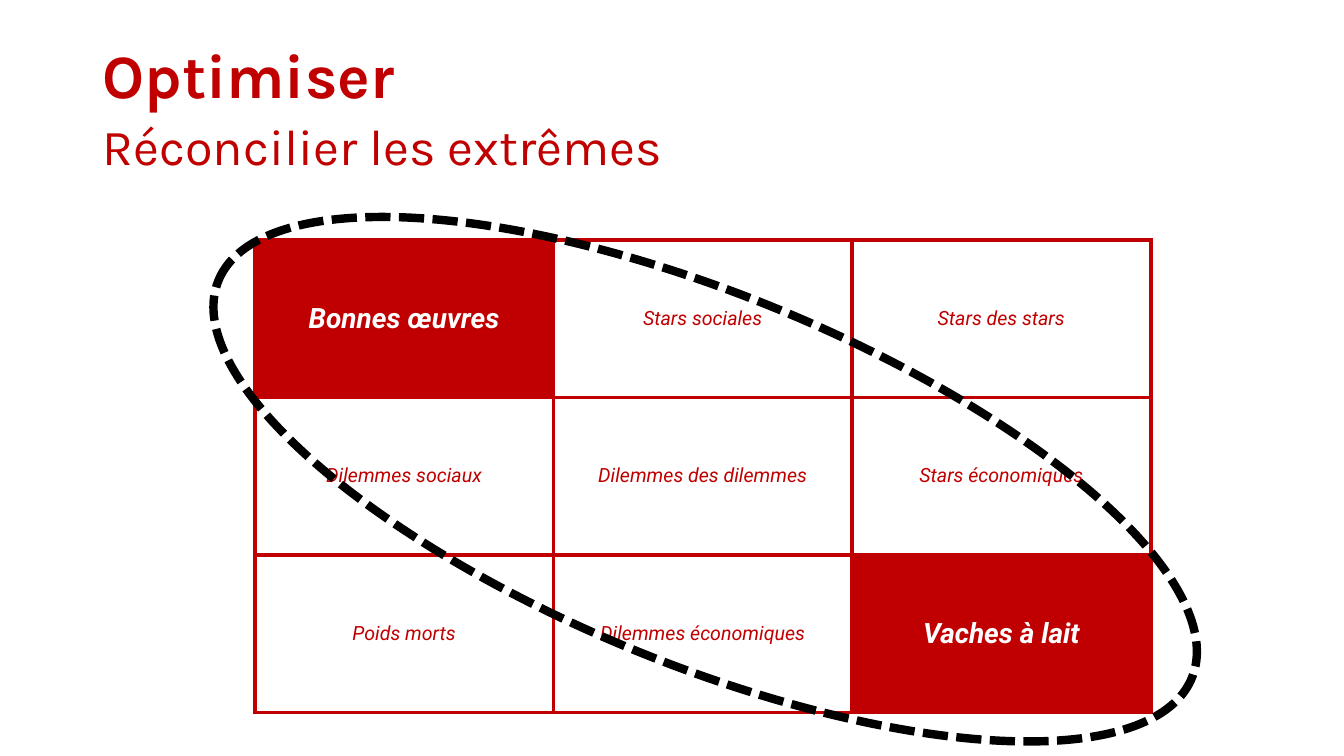
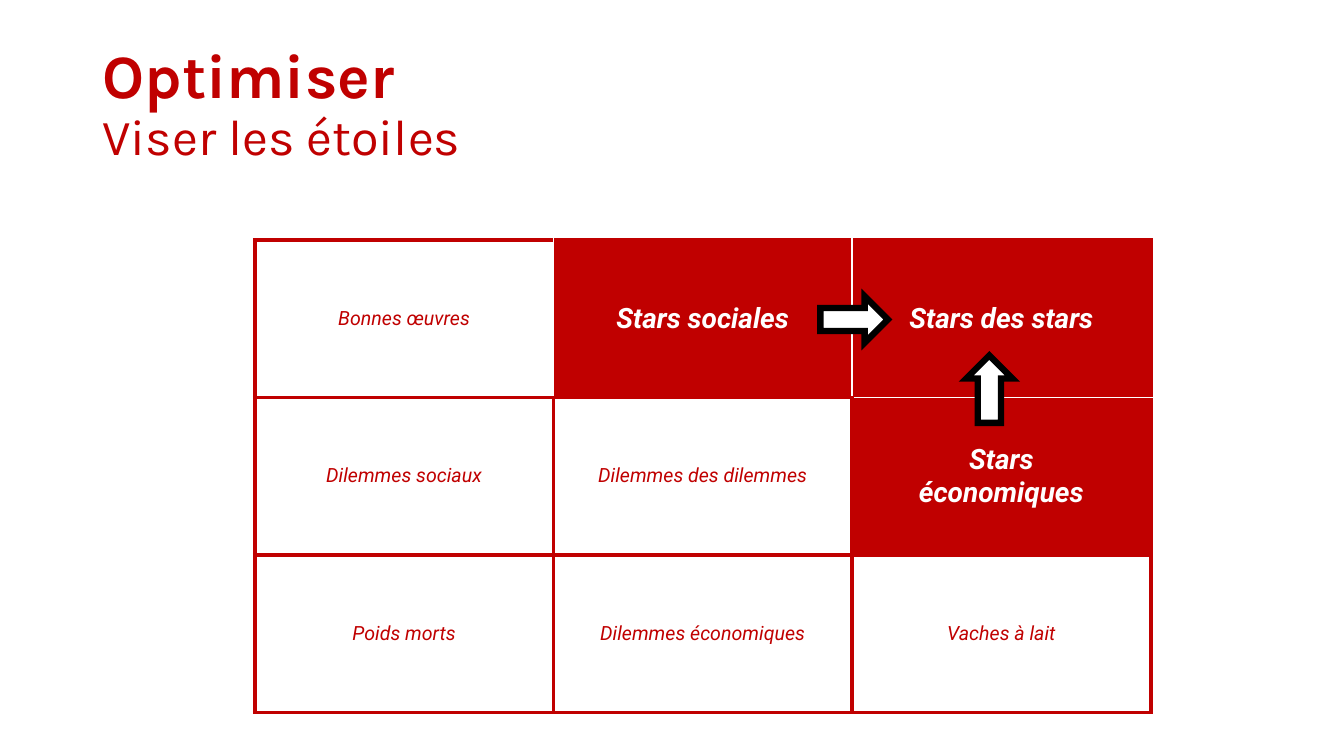
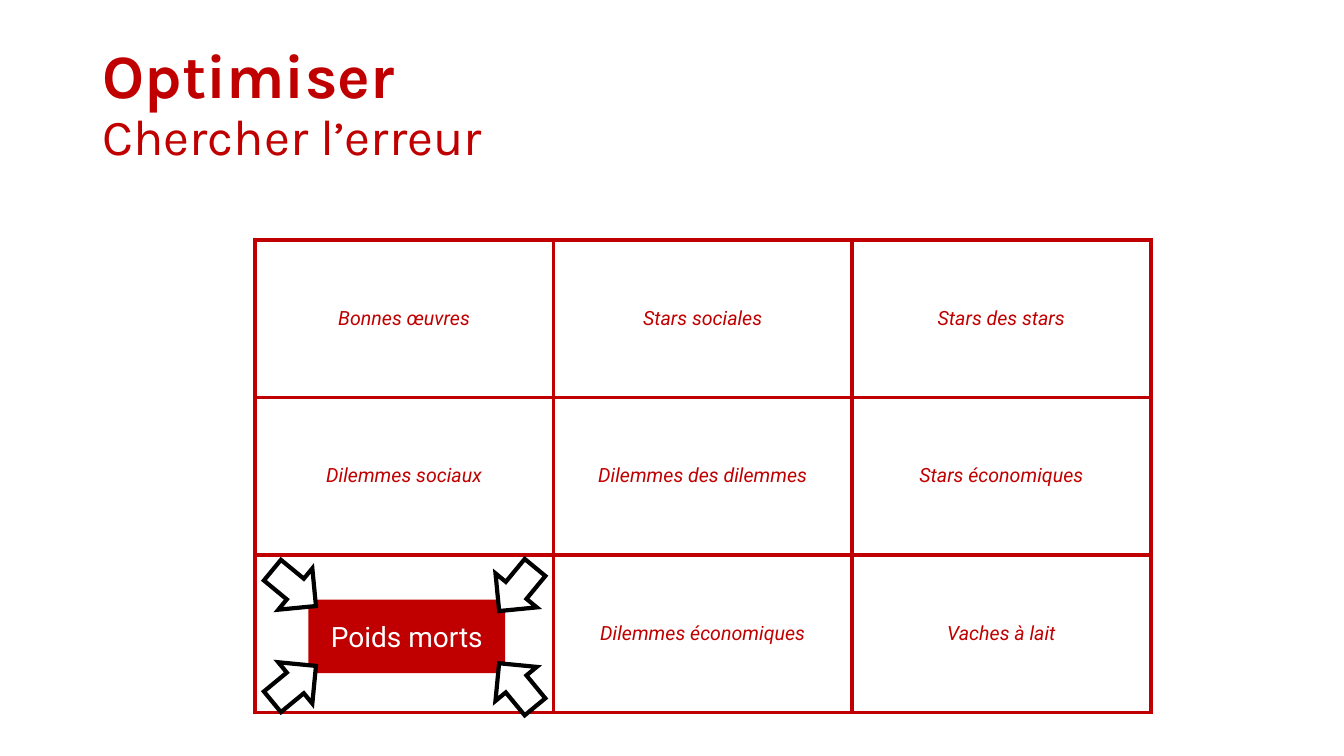
from dataclasses import dataclass
from typing import NamedTuple, Optional

from lxml.etree import SubElement
from pptx import Presentation
from pptx.dml.color import RGBColor
from pptx.enum.dml import MSO_LINE
from pptx.enum.shapes import MSO_SHAPE
from pptx.enum.text import MSO_ANCHOR, MSO_AUTO_SIZE, PP_ALIGN
from pptx.oxml.ns import qn
from pptx.shapes.autoshape import Shape
from pptx.slide import Slide
from pptx.table import _Cell as Cell
from pptx.text.text import Font
from pptx.util import Pt

RED = RGBColor(0xC0, 0x00, 0x00)
WHITE = RGBColor(0xFF, 0xFF, 0xFF)
BLACK = RGBColor(0x00, 0x00, 0x00)
TITLE_FONT = "Karla"
BODY_FONT = "Roboto"

TITLE_ONLY_LAYOUT = 5
HEADING = "Optimiser"
QUADRANTS = [
    ["Bonnes œuvres", "Stars sociales", "Stars des stars"],
    ["Dilemmes sociaux", "Dilemmes des dilemmes", "Stars économiques"],
    ["Poids morts", "Dilemmes économiques", "Vaches à lait"],
]
MATRIX_LEFT, MATRIX_TOP = 182, 171.4
COLUMN_WIDTH, ROW_HEIGHT = 213.33, 112.5
BORDER_TAGS = {"left": "a:lnL", "right": "a:lnR", "top": "a:lnT", "bottom": "a:lnB"}
BORDER_WIDTH = 3


class Position(NamedTuple):
    row: int
    column: int


class Frame(NamedTuple):
    left: float
    top: float
    width: float
    height: float


class Divider(NamedTuple):
    """A white border on the right or bottom side of a matrix cell."""
    position: Position
    side: str
    width: float


@dataclass(frozen=True)
class Outlined:
    """An outlined shape laid over the matrix."""
    kind: MSO_SHAPE
    frame: Frame
    rotation: float
    line_width: float
    fill: Optional[RGBColor] = WHITE
    dash: Optional[MSO_LINE] = None


@dataclass(frozen=True)
class MatrixPage:
    subtitle: str
    subtitle_gap: float = 0
    highlights: tuple[Position, ...] = ()
    dividers: tuple[Divider, ...] = ()
    overlays: tuple[Outlined, ...] = ()
    label_cell: Optional[Position] = None


def arrow(left: float, top: float, rotation: float,
          size: tuple[float, float], line_width: float) -> Outlined:
    return Outlined(MSO_SHAPE.RIGHT_ARROW, Frame(left, top, *size), rotation, line_width)


LABEL_FRAME = Frame(220.3, 428.4, 140.5, 52.5)
STAR_ARROW = ((48.2, 33.1), 4.5)
CORNER_ARROW = ((40.3, 38.2), 3)

PAGES = [
    MatrixPage(
        "Réconcilier les extrêmes",
        subtitle_gap=7,
        highlights=(Position(0, 0), Position(2, 2)),
        overlays=(
            Outlined(MSO_SHAPE.OVAL, Frame(128.2, 210.2, 751, 264.2), 22.2, 6,
                     fill=None, dash=MSO_LINE.SQUARE_DOT),
        ),
    ),
    MatrixPage(
        "Viser les étoiles",
        highlights=(Position(0, 1), Position(0, 2), Position(1, 2)),
        dividers=(
            Divider(Position(0, 0), "right", 1),
            Divider(Position(0, 1), "right", 1),
            Divider(Position(0, 2), "bottom", 1.5),
        ),
        overlays=(
            arrow(586, 211.7, 0, *STAR_ARROW),
            arrow(682.6, 261.4, 270, *STAR_ARROW),
        ),
    ),
    MatrixPage(
        "Chercher l’erreur",
        overlays=(
            arrow(190, 401, 39.5, *CORNER_ARROW),
            arrow(349.2, 401.8, 129.5, *CORNER_ARROW),
            arrow(190, 469.4, 320.5, *CORNER_ARROW),
            arrow(349.2, 470.2, 230.5, *CORNER_ARROW),
        ),
        label_cell=Position(2, 0),
    ),
]


def set_font(font: Font, name: str, size: float, color: RGBColor,
             bold: bool = False, italic: bool = False) -> None:
    font.name = name
    font.size = Pt(size)
    font.color.rgb = color
    font.bold = bold
    font.italic = italic


def add_title(page: Slide, subtitle: str, subtitle_gap: float) -> None:
    title = page.shapes.title
    title.left, title.top, title.width, title.height = map(Pt, (66, 28.8, 828, 104.4))
    frame = title.text_frame
    frame.word_wrap = True
    frame.auto_size = MSO_AUTO_SIZE.NONE
    frame.vertical_anchor = MSO_ANCHOR.TOP
    frame.text = f"{HEADING}\n{subtitle}"
    heading, second = frame.paragraphs
    for para in (heading, second):
        para.alignment = PP_ALIGN.LEFT
        para.line_spacing = 0.9
    second.space_before = Pt(subtitle_gap)
    set_font(heading.font, TITLE_FONT, 44, RED, bold=True)
    set_font(second.font, TITLE_FONT, 36, RED)


def set_border(cell: Cell, side: str, color: RGBColor, width: float) -> None:
    properties = cell._tc.get_or_add_tcPr()
    line = SubElement(properties, qn(BORDER_TAGS[side]), w=str(int(Pt(width))))
    fill = SubElement(line, qn("a:solidFill"))
    SubElement(fill, qn("a:srgbClr"), val=str(color))


def white_borders(dividers: tuple[Divider, ...]) -> dict[tuple[Position, str], float]:
    """Map each divider to both cells that share it."""
    widths = {}
    for (row, column), side, width in dividers:
        widths[Position(row, column), side] = width
        if side == "right":
            widths[Position(row, column + 1), "left"] = width
        else:
            widths[Position(row + 1, column), "top"] = width
    return widths


def format_cell(cell: Cell, text: str, highlighted: bool) -> None:
    cell.vertical_anchor = MSO_ANCHOR.MIDDLE
    cell.margin_left = cell.margin_right = Pt(22.3)
    cell.margin_top = cell.margin_bottom = Pt(3.6)
    if highlighted:
        cell.fill.solid()
        cell.fill.fore_color.rgb = RED
    else:
        cell.fill.background()
    cell.text = text
    para = cell.text_frame.paragraphs[0]
    para.alignment = PP_ALIGN.CENTER
    set_font(para.font, BODY_FONT, 20 if highlighted else 14,
             WHITE if highlighted else RED, bold=highlighted, italic=True)


def add_matrix(page: Slide, content: MatrixPage) -> None:
    rows, columns = len(QUADRANTS), len(QUADRANTS[0])
    table = page.shapes.add_table(
        rows, columns, Pt(MATRIX_LEFT), Pt(MATRIX_TOP),
        Pt(columns * COLUMN_WIDTH), Pt(rows * ROW_HEIGHT)).table
    table.first_row = False
    table.horz_banding = False
    for column in table.columns:
        column.width = Pt(COLUMN_WIDTH)
    for row in table.rows:
        row.height = Pt(ROW_HEIGHT)
    white = white_borders(content.dividers)
    for row_index, names in enumerate(QUADRANTS):
        for column_index, name in enumerate(names):
            position = Position(row_index, column_index)
            cell = table.cell(*position)
            for side in BORDER_TAGS:
                if (position, side) in white:
                    set_border(cell, side, WHITE, white[position, side])
                else:
                    set_border(cell, side, RED, BORDER_WIDTH)
            text = "" if position == content.label_cell else name
            format_cell(cell, text, position in content.highlights)


def add_plain_shape(page: Slide, kind: MSO_SHAPE, frame: Frame,
                    fill: Optional[RGBColor]) -> Shape:
    shape = page.shapes.add_shape(kind, *map(Pt, frame))
    shape.shadow.inherit = False
    if fill is None:
        shape.fill.background()
    else:
        shape.fill.solid()
        shape.fill.fore_color.rgb = fill
    return shape


def add_label(page: Slide, text: str) -> None:
    label = add_plain_shape(page, MSO_SHAPE.RECTANGLE, LABEL_FRAME, RED)
    label.line.fill.background()
    label.text_frame.word_wrap = True
    label.text_frame.vertical_anchor = MSO_ANCHOR.MIDDLE
    label.text_frame.text = text
    para = label.text_frame.paragraphs[0]
    para.alignment = PP_ALIGN.CENTER
    set_font(para.font, BODY_FONT, 20, WHITE)


def add_outlined(page: Slide, outlined: Outlined) -> None:
    shape = add_plain_shape(page, outlined.kind, outlined.frame, outlined.fill)
    shape.rotation = outlined.rotation
    shape.line.color.rgb = BLACK
    shape.line.width = Pt(outlined.line_width)
    if outlined.dash is not None:
        shape.line.dash_style = outlined.dash
    outline = shape.element.spPr.find(qn("a:ln"))
    SubElement(outline, qn("a:miter"), lim="800000")


def main() -> None:
    deck = Presentation()
    deck.slide_width, deck.slide_height = Pt(960), Pt(540)
    for content in PAGES:
        page = deck.slides.add_slide(deck.slide_layouts[TITLE_ONLY_LAYOUT])
        add_title(page, content.subtitle, content.subtitle_gap)
        add_matrix(page, content)
        if content.label_cell is not None:
            row, column = content.label_cell
            add_label(page, QUADRANTS[row][column])
        for outlined in content.overlays:
            add_outlined(page, outlined)
    deck.save("out.pptx")


if __name__ == "__main__":
    main()
